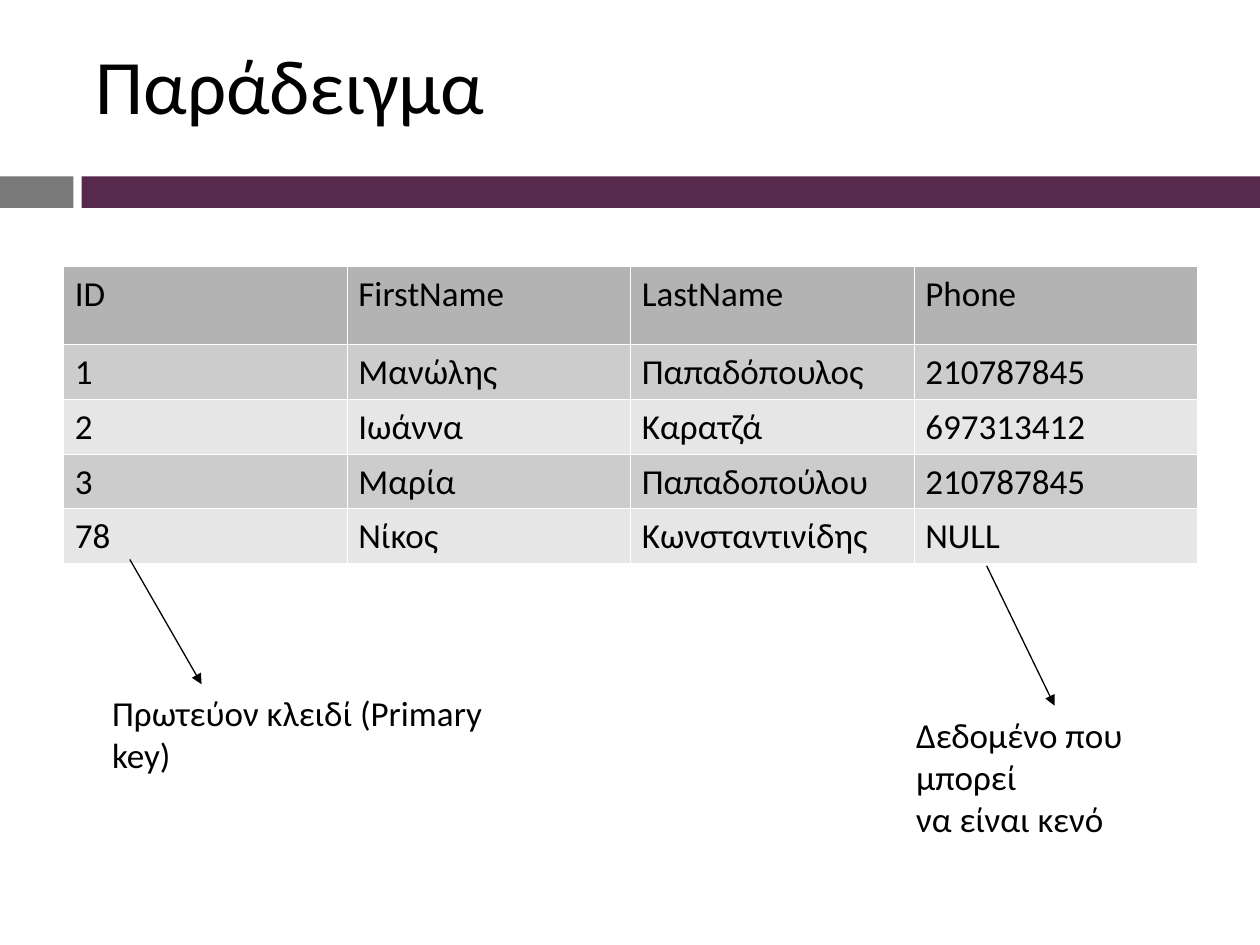
from lxml.etree import SubElement
from pptx import Presentation
from pptx.dml.color import RGBColor
from pptx.enum.shapes import MSO_CONNECTOR, MSO_SHAPE
from pptx.enum.text import MSO_ANCHOR, MSO_AUTO_SIZE, PP_ALIGN
from pptx.oxml.ns import qn
from pptx.util import Pt

BLACK = RGBColor(0x00, 0x00, 0x00)
WHITE = RGBColor(0xFF, 0xFF, 0xFF)
GREY = RGBColor(0x79, 0x79, 0x79)
PURPLE = RGBColor(0x57, 0x29, 0x4C)
HEADER_FILL = RGBColor(0xB3, 0xB3, 0xB3)
ROW_FILLS = (RGBColor(0xCC, 0xCC, 0xCC), RGBColor(0xE6, 0xE6, 0xE6))

FONT = "Calibri"
PEOPLE = [
    ("ID", "FirstName", "LastName", "Phone"),
    ("1", "Μανώλης", "Παπαδόπουλος", "210787845"),
    ("2", "Ιωάννα", "Καρατζά", "697313412"),
    ("3", "Μαρία", "Παπαδοπούλου", "210787845"),
    ("78", "Νίκος", "Κωνσταντινίδης", "NULL"),
]


def format_text(frame, size):
    for paragraph in frame.paragraphs:
        paragraph.alignment = PP_ALIGN.LEFT
        for run in paragraph.runs:
            run.font.name = FONT
            run.font.size = Pt(size)
            run.font.color.rgb = BLACK


def set_insets(target, top, bottom):
    target.margin_left = target.margin_right = Pt(6.5)
    target.margin_top, target.margin_bottom = Pt(top), Pt(bottom)


def add_title(slide, box, text):
    title = slide.shapes.title
    title.left, title.top, title.width, title.height = map(Pt, box)
    frame = title.text_frame
    frame.text = text
    frame.word_wrap = True
    frame.auto_size = MSO_AUTO_SIZE.NONE
    frame.vertical_anchor = MSO_ANCHOR.MIDDLE
    set_insets(frame, 2.2, 3.6)
    format_text(frame, 44)


def add_band(slide, box):
    """A short grey block and a long purple one, with a gap between."""
    left, top, width, height = box
    grey_width, gap = 42, 4.6
    purple_left = left + grey_width + gap
    for x, w, color in ((left, grey_width, GREY),
                        (purple_left, left + width - purple_left, PURPLE)):
        block = slide.shapes.add_shape(
            MSO_SHAPE.RECTANGLE, Pt(x), Pt(top), Pt(w), Pt(height))
        block.shadow.inherit = False
        block.fill.solid()
        block.fill.fore_color.rgb = color
        block.line.fill.background()


def set_borders(cell):
    properties = cell._tc.get_or_add_tcPr()
    for index, side in enumerate(("a:lnL", "a:lnR", "a:lnT", "a:lnB")):
        border = SubElement(properties, qn(side), w=str(Pt(0.06)))
        fill = SubElement(border, qn("a:solidFill"))
        SubElement(fill, qn("a:srgbClr"), val=str(WHITE))
        properties.insert(index, border)  # borders come before the fill


def add_people_table(slide, box):
    left, top, width, height = box
    graphic = slide.shapes.add_table(
        len(PEOPLE), len(PEOPLE[0]), Pt(left), Pt(top), Pt(width), Pt(height))
    table = graphic.table
    for column in table.columns:
        column.width = Pt(width / len(PEOPLE[0]))
    for r, person in enumerate(PEOPLE):
        table.rows[r].height = Pt(26.6 if r else 44.6)
        for c, value in enumerate(person):
            cell = table.cell(r, c)
            cell.text = value
            cell.fill.solid()
            cell.fill.fore_color.rgb = ROW_FILLS[(r - 1) % 2] if r else HEADER_FILL
            set_insets(cell, 5.8, 3.6)
            set_borders(cell)
            format_text(cell.text_frame, 20)
            cell.text_frame.paragraphs[0].line_spacing = 0.89
            for run in cell.text_frame.paragraphs[0].runs:
                run.font.bold = False
    graphic.height = Pt(height)


def add_callout(slide, box, text, start, end):
    """An arrow from a table value to its explanation."""
    arrow = slide.shapes.add_connector(
        MSO_CONNECTOR.STRAIGHT, *map(Pt, start), *map(Pt, end))
    arrow.line.color.rgb = BLACK
    arrow.line.width = Pt(0.75)
    SubElement(arrow.line._get_or_add_ln(), qn("a:tailEnd"), type="triangle")
    SubElement(arrow._element.spPr, qn("a:effectLst"))

    note = slide.shapes.add_textbox(*map(Pt, box))
    frame = note.text_frame
    frame.text = text
    frame.word_wrap = False
    frame.auto_size = MSO_AUTO_SIZE.SHAPE_TO_FIT_TEXT
    set_insets(frame, 4.3, 2.9)
    format_text(frame, 20)


def main():
    deck = Presentation()
    deck.slide_width, deck.slide_height = Pt(720), Pt(540)
    slide = deck.slides.add_slide(deck.slide_layouts[5])

    add_band(slide, (0, 100.8, 720, 18))
    add_title(slide, (48.2, 9.4, 642.2, 77.8), "Παράδειγμα")
    add_people_table(slide, (36.3, 152.2, 648, 175.7))
    add_callout(slide, (57.6, 391, 232.6, 24.5), "Πρωτεύον κλειδί (Primary key)",
                start=(74.2, 319.7), end=(115.2, 391))
    add_callout(slide, (517, 403.2, 170.6, 43.2), "Δεδομένο που μπορεί\nνα είναι κενό",
                start=(563.8, 323.3), end=(602.6, 403.2))

    deck.save("out.pptx")


if __name__ == "__main__":
    main()
